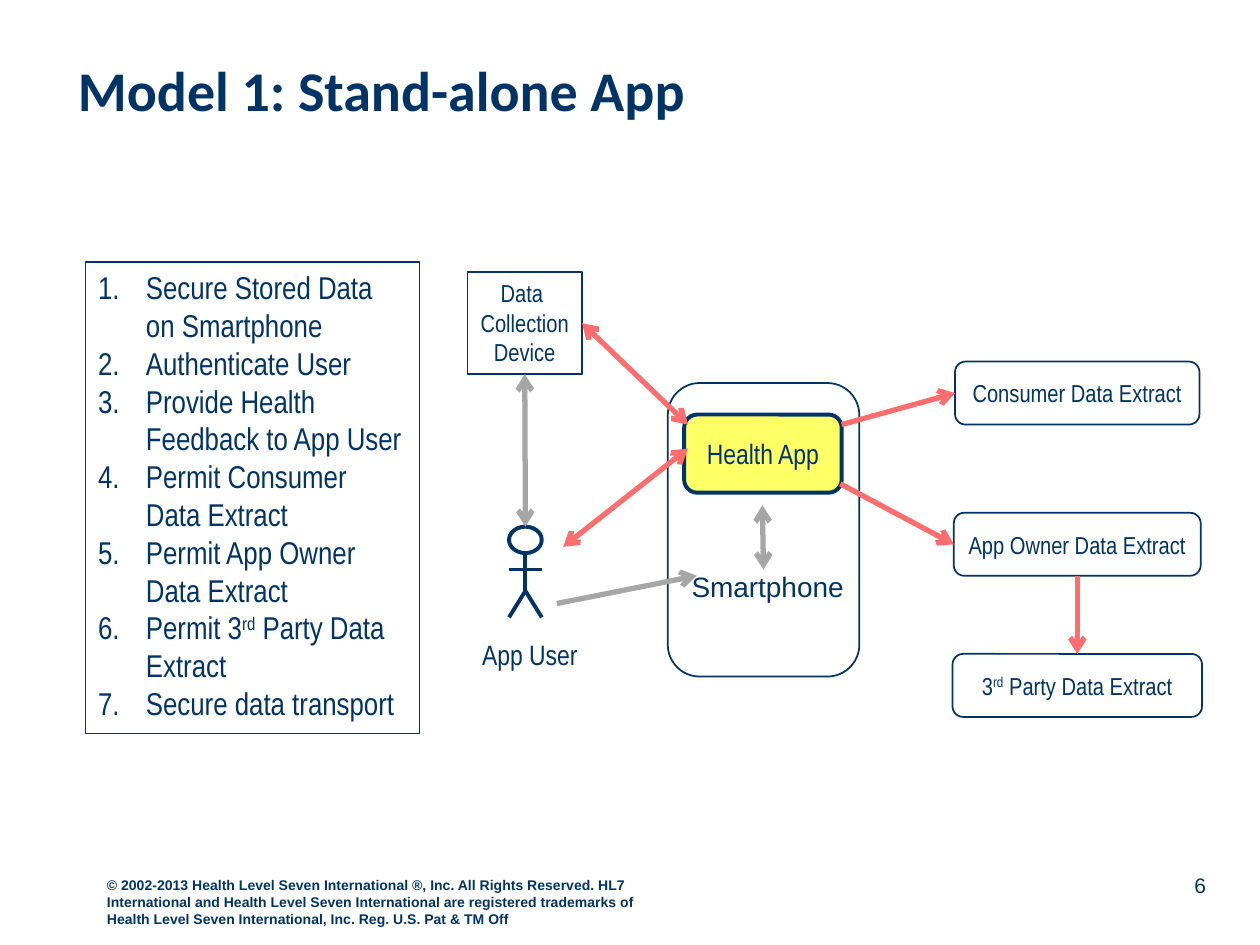
from lxml import etree
from pptx import Presentation
from pptx.dml.color import RGBColor
from pptx.enum.shapes import MSO_CONNECTOR, MSO_SHAPE
from pptx.enum.text import MSO_ANCHOR, PP_ALIGN
from pptx.oxml.ns import qn
from pptx.util import Inches, Pt

ROUND, RECT, OVAL = MSO_SHAPE.ROUNDED_RECTANGLE, MSO_SHAPE.RECTANGLE, MSO_SHAPE.OVAL
STRAIGHT = MSO_CONNECTOR.STRAIGHT
LEFT, CENTER, RIGHT = PP_ALIGN.LEFT, PP_ALIGN.CENTER, PP_ALIGN.RIGHT
TOP, MIDDLE, BOTTOM = MSO_ANCHOR.TOP, MSO_ANCHOR.MIDDLE, MSO_ANCHOR.BOTTOM
NAVY, WHITE, YELLOW, RED, GRAY = "003366", "FFFFFF", "FFFF66", "FF6D6D", "A6A6A6"
NARROW = "Arial Narrow"

TITLE = "Model 1: Stand-alone App"
COPYRIGHT = (
    "© 2002-2013 Health Level Seven International ®, Inc. All Rights Reserved. "
    "HL7 International and Health Level Seven International are registered "
    "trademarks of Health Level Seven International, Inc. Reg. U.S. Pat & TM Off"
)
REQUIREMENTS = [
    "Secure Stored Data on Smartphone",
    "Authenticate User",
    "Provide Health Feedback to App User",
    "Permit Consumer Data Extract",
    "Permit App Owner Data Extract",
    "Permit 3^rd^ Party Data Extract",
    "Secure data transport",
]
EXTRACTS = [
    ("Consumer Data Extract", (7.58, 2.87, 1.94, 0.5)),
    ("App Owner Data Extract", (7.57, 4.07, 1.96, 0.5)),
    ("3^rd^ Party Data Extract", (7.56, 5.19, 1.98, 0.5)),
]
STICK_LINES = [
    ((4.17, 4.39), (4.17, 4.69)),
    ((4.17, 4.69), (4.04, 4.9)),
    ((4.04, 4.52), (4.3, 4.52)),
    ((4.17, 4.69), (4.3, 4.9)),
]


def color(value):
    return RGBColor.from_string(value)


def write(box, paragraphs, size, font=NARROW, align=LEFT, anchor=TOP, bold=False, wrap=True):
    frame = box.text_frame
    frame.word_wrap = wrap
    frame.vertical_anchor = anchor
    for index, text in enumerate(paragraphs):
        para = frame.paragraphs[0] if index == 0 else frame.add_paragraph()
        para.alignment = align
        for part, words in enumerate(text.split("^")):
            span = para.add_run()
            span.text = words
            span.font.name, span.font.size, span.font.bold = font, Pt(size), bold
            span.font.color.rgb = color(NAVY)
            if part % 2:
                span.font._element.set("baseline", "30000")


def add_text(parent, place, text, size, **style):
    box = parent.add_textbox(*map(Inches, place))
    write(box, [text], size, **style)


def add_box(parent, kind, place, width, fill=WHITE):
    box = parent.add_shape(kind, *map(Inches, place))
    box.shadow.inherit = False
    box.fill.solid()
    box.fill.fore_color.rgb = color(fill)
    box.line.color.rgb = color(NAVY)
    box.line.width = Pt(width)
    return box


def add_line(parent, start, end, stroke, width, heads=()):
    line = parent.add_connector(STRAIGHT, *map(Inches, start + end))
    line.line.color.rgb = color(stroke)
    line.line.width = Pt(width)
    for head in heads:
        etree.SubElement(line.line._get_or_add_ln(), qn(f"a:{head}"), type="arrow")
    etree.SubElement(line._element.spPr, qn("a:effectLst"))
    return line


def number(box):
    for para in box.text_frame.paragraphs:
        props = para._p.get_or_add_pPr()
        props.set("marL", str(Inches(0.38)))
        props.set("indent", str(-Inches(0.38)))
        etree.SubElement(props, qn("a:buFont"), typeface="+mj-lt")
        etree.SubElement(props, qn("a:buAutoNum"), type="arabicPeriod")


deck = Presentation()
deck.slide_width, deck.slide_height = Inches(10), Inches(7.5)
page = deck.slides.add_slide(deck.slide_layouts[6])
shapes = page.shapes

add_text(shapes, (9, 6.65, 0.67, 0.52), "6", 12, font="Arial", align=RIGHT, anchor=BOTTOM)
add_text(shapes, (0.75, 6.91, 4.58, 0.5), COPYRIGHT, 8, font="Arial", bold=True)

phone = shapes.add_group_shape().shapes
add_box(phone, ROUND, (5.3, 3.04, 1.52, 2.33), 1)
app = add_box(phone, ROUND, (5.43, 3.29, 1.25, 0.62), 2.25, YELLOW)
write(app, ["Health App"], 16, align=CENTER, anchor=MIDDLE, wrap=False)

add_text(shapes, (0.52, 0.39, 8.33, 0.64), TITLE, 32, font="Calibri", bold=True)

extracts = []
for label, place in EXTRACTS:
    extract = add_box(shapes, ROUND, place, 1)
    write(extract, [label], 14, align=CENTER, anchor=MIDDLE, wrap=False)
    extracts.append(extract)
consumer, owner, third_party = extracts

user = shapes.add_group_shape().shapes
head = add_box(user, OVAL, (4.04, 4.18, 0.26, 0.21), 2.25)
for start, end in STICK_LINES:
    add_line(user, start, end, NAVY, 2.25)
add_text(user, (3.72, 5.01, 0.97, 0.37), "App User", 16, align=CENTER, wrap=False)

add_text(shapes, (5.39, 4.47, 1.49, 0.37), "Smartphone", 16, font="Arial")

device = add_box(shapes, RECT, (3.71, 2.16, 0.91, 0.81), 0.75)
write(device, ["Data ", "Collection", "Device"], 14, align=CENTER, wrap=False)

ONE_WAY, TWO_WAY = ("tailEnd",), ("headEnd", "tailEnd")
ARROWS = [
    ((6.68, 3.37), (7.58, 3.12), RED, ONE_WAY, None, (consumer, 1)),
    ((8.55, 4.57), (8.55, 5.19), RED, ONE_WAY, (owner, 2), (third_party, 0)),
    ((6.67, 3.84), (7.57, 4.32), RED, ONE_WAY, None, (owner, 1)),
    ((4.47, 4.34), (5.46, 3.56), RED, TWO_WAY, None, None),
    ((6.05, 4.01), (6.06, 4.52), GRAY, TWO_WAY, None, None),
    ((4.42, 4.79), (5.53, 4.57), GRAY, ONE_WAY, None, None),
    ((4.62, 2.56), (5.46, 3.37), RED, TWO_WAY, (device, 3), None),
    ((4.17, 2.97), (4.17, 4.18), GRAY, TWO_WAY, (device, 2), (head, 0)),
]
for start, end, stroke, heads, source, target in ARROWS:
    arrow = add_line(shapes, start, end, stroke, 3, heads)
    if source:
        arrow.begin_connect(*source)
    if target:
        arrow.end_connect(*target)

requirements = add_box(shapes, RECT, (0.68, 2.08, 2.65, 3.74), 0.75)
requirements.fill.background()
write(requirements, REQUIREMENTS, 18)
number(requirements)

deck.save("out.pptx")
